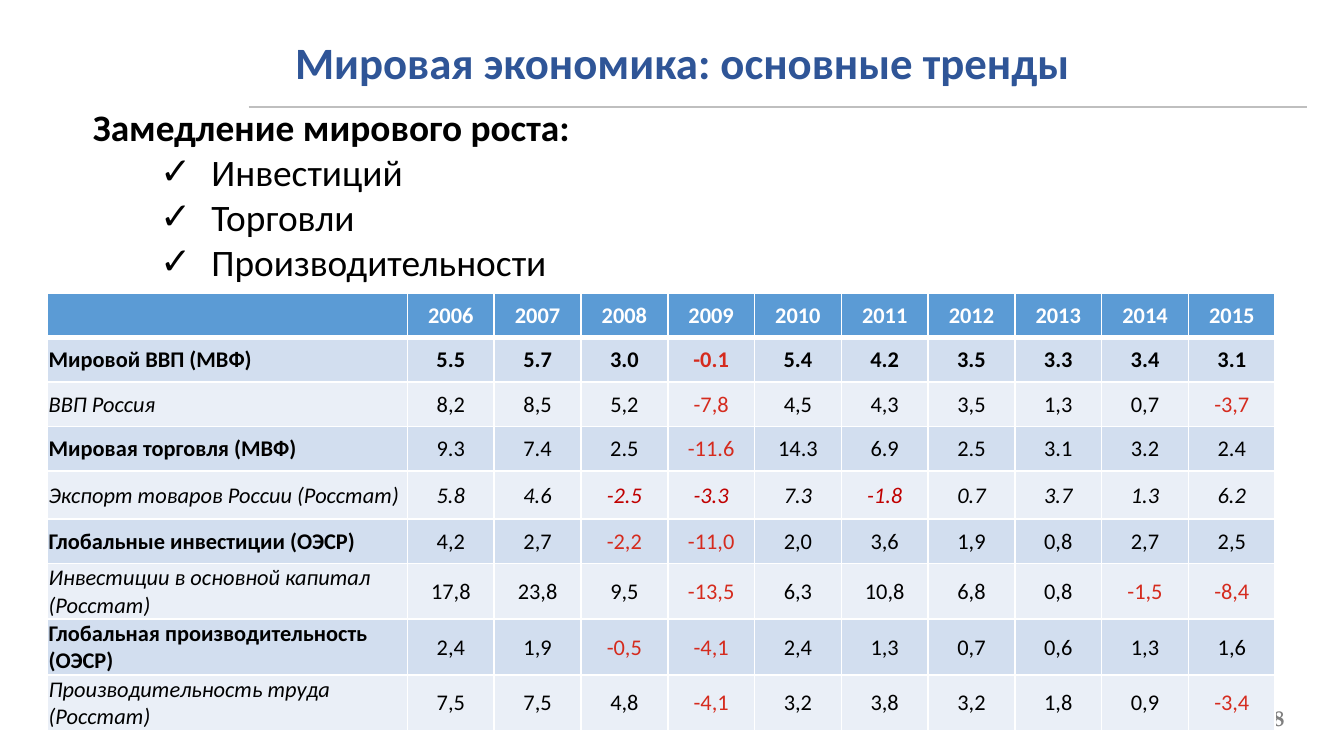
from dataclasses import dataclass

from pptx import Presentation, util as u
from pptx.dml.color import RGBColor
from pptx.enum import shapes, text
from pptx.oxml import parse_xml
from pptx.oxml.ns import nsdecls, qn
from pptx.oxml.xmlchemy import OxmlElement


@dataclass(frozen=True)
class Theme:
    font: str = "Calibri"
    number_font: str = "TeX Gyre Pagella"
    title: str = "2F5597"
    ink: str = "000000"
    white: str = "FFFFFF"
    grey: str = "7F7F7F"
    rule: str = "BFBFBF"
    header: str = "5B9BD5"
    bands: tuple = ("D2DEEF", "EAEFF7")
    red: str = "D52B1E"
    dark_red: str = "C00000"
    title_size: int = 24
    list_size: int = 20
    small_size: int = 12


YEARS = range(2006, 2016)
# Label, yearly values, whether the values share the style of the label
ROWS = [
    ("Мировой ВВП (МВФ)", "5.5 5.7 3.0 -0.1 5.4 4.2 3.5 3.3 3.4 3.1", True),
    ("ВВП Россия", "8,2 8,5 5,2 -7,8 4,5 4,3 3,5 1,3 0,7 -3,7", False),
    ("Мировая торговля (МВФ)",
     "9.3 7.4 2.5 -11.6 14.3 6.9 2.5 3.1 3.2 2.4", False),
    ("Экспорт товаров России (Росстат)",
     "5.8 4.6 -2.5 -3.3 7.3 -1.8 0.7 3.7 1.3 6.2", True),
    ("Глобальные инвестиции (ОЭСР)",
     "4,2 2,7 -2,2 -11,0 2,0 3,6 1,9 0,8 2,7 2,5", False),
    ("Инвестиции в основной капитал (Росстат)",
     "17,8 23,8 9,5 -13,5 6,3 10,8 6,8 0,8 -1,5 -8,4", False),
    ("Глобальная производительность (ОЭСР)",
     "2,4 1,9 -0,5 -4,1 2,4 1,3 0,7 0,6 1,3 1,6", False),
    ("Производительность труда (Росстат)",
     "7,5 7,5 4,8 -4,1 3,2 3,8 3,2 1,8 0,9 -3,4", False),
]
ROW_HEIGHTS = [0.84] * 4 + [0.91] + [0.84] * 3 + [0.91]


class SlideBuilder:
    def __init__(self, s, theme):
        self.s, self.t = s, theme

    def style(self, p, size, color, bold=False, italic=False, font=None):
        for r in p.runs:
            f = r.font
            f.name, f.size = font or self.t.font, u.Pt(size)
            f.bold, f.italic = bold, italic
            f.color.rgb = RGBColor.from_string(color)

    def place(self, sp, x, y, w, h):
        sp.left, sp.top, sp.width, sp.height = map(u.Cm, (x, y, w, h))
        sp.text_frame.auto_size = text.MSO_AUTO_SIZE.NONE
        return sp.text_frame

    def title(self, words, *box):
        tf = self.place(self.s.shapes.title, *box)
        tf.text = words
        tf.paragraphs[0].alignment = text.PP_ALIGN.CENTER
        self.style(tf.paragraphs[0], self.t.title_size, self.t.title, bold=True)

    def checklist(self, heading, items, *box):
        tf = self.place(self.s.placeholders[1], *box)
        tf.vertical_anchor = text.MSO_ANCHOR.TOP
        for i, words in enumerate([heading, *items]):
            p = tf.add_paragraph() if i else tf.paragraphs[0]
            p.text = words
            p.level = 1 if i else 0
            p.space_before = u.Pt(0)
            pPr = p._p.get_or_add_pPr()
            pPr.set("marL", str(u.Cm(2.24) if i else 0))
            pPr.set("indent", str(u.Cm(-0.97) if i else 0))
            bullet = OxmlElement("a:buChar" if i else "a:buNone")
            if i:
                bullet.set("char", "✓")
            pPr.append(bullet)
            self.style(p, self.t.list_size, self.t.ink, bold=not i)

    def rule(self, x1, x2, y):
        line = self.s.shapes.add_connector(
            shapes.MSO_CONNECTOR.STRAIGHT, u.Cm(x1), u.Cm(y), u.Cm(x2), u.Cm(y))
        line.line.color.rgb = RGBColor.from_string(self.t.rule)
        line.line.width = u.Pt(1)
        line._element.spPr.append(OxmlElement("a:effectLst"))

    def slide_number(self, words, *box):
        tf = self.place(self.s.shapes.add_textbox(0, 0, 0, 0), *box)
        tf.margin_left = tf.margin_right = tf.margin_top = tf.margin_bottom = 0
        tf.word_wrap = False
        tf.vertical_anchor = text.MSO_ANCHOR.MIDDLE
        tf.text = words
        tf.paragraphs[0].alignment = text.PP_ALIGN.RIGHT
        self.style(tf.paragraphs[0], self.t.small_size, self.t.grey, bold=True,
                   font=self.t.number_font)

    def borders(self, cell, top, bottom):
        tcPr = cell._tc.get_or_add_tcPr()
        for i, (side, pt) in enumerate(
                [("L", 1), ("R", 1), ("T", top), ("B", bottom)]):
            tcPr.insert(i, parse_xml(
                f'<a:ln{side} {nsdecls("a")} w="{u.Pt(pt)}"><a:solidFill>'
                f'<a:srgbClr val="{self.t.white}"/></a:solidFill></a:ln{side}>'))

    def cell(self, cell, words, fill, color, bold, italic, centred):
        cell.fill.solid()
        cell.fill.fore_color.rgb = RGBColor.from_string(fill)
        cell.margin_left = cell.margin_right = u.Cm(0.02)
        cell.margin_top, cell.margin_bottom = u.Cm(0.02), 0
        cell.vertical_anchor = text.MSO_ANCHOR.MIDDLE
        cell.text = words
        p = cell.text_frame.paragraphs[0]
        p.alignment = text.PP_ALIGN.CENTER if centred else text.PP_ALIGN.LEFT
        self.style(p, self.t.small_size, color, bold, italic)

    def table(self, x, y, label_w, year_w):
        t = self.t
        tbl = self.s.shapes.add_table(
            len(ROWS) + 1, len(YEARS) + 1, u.Cm(x), u.Cm(y),
            u.Cm(label_w + year_w * len(YEARS)), u.Cm(sum(ROW_HEIGHTS))).table
        for c, col in enumerate(tbl.columns):
            col.width = u.Cm(year_w if c else label_w)
        for row, h in zip(tbl.rows, ROW_HEIGHTS):
            row.height = u.Cm(h)

        # Header row
        for c, words in enumerate(["", *map(str, YEARS)]):
            self.cell(tbl.cell(0, c), words, t.header, t.white, True, False, True)
            self.borders(tbl.cell(0, c), 1, 3)

        # World rows are bold, Russian rows italic
        for n, (label, values, same_style) in enumerate(ROWS):
            russian = n % 2 == 1
            red = t.dark_red if russian and same_style else t.red
            for c, words in enumerate([label, *values.split()]):
                styled = c == 0 or same_style
                self.cell(tbl.cell(n + 1, c), words, t.bands[n % 2],
                          red if words.startswith("-") else t.ink,
                          styled and not russian, styled and russian, c > 0)
                self.borders(tbl.cell(n + 1, c), 1 if n else 3, 1)


def main():
    prs = Presentation()
    prs.slide_width, prs.slide_height = u.Cm(25.4), u.Cm(14.29)
    b = SlideBuilder(prs.slides.add_slide(prs.slide_layouts[1]), Theme())

    # Heading and list
    b.title("Мировая экономика: основные тренды", 4.5, 0.53, 16.79, 1.27)
    b.checklist("Замедление мирового роста:",
                ["Инвестиций", "Торговли", "Производительности"],
                1.5, 1.85, 21, 3.68)

    # Rule and slide number, which the table partly covers
    b.rule(4.7, 24.71, 2.03)
    b.slide_number("28", 23.06, 13.44, 1.22, 0.25)

    # Growth figures
    b.table(0.9, 5.54, 6.8, 1.64)
    prs.save("out.pptx")


if __name__ == "__main__":
    main()
